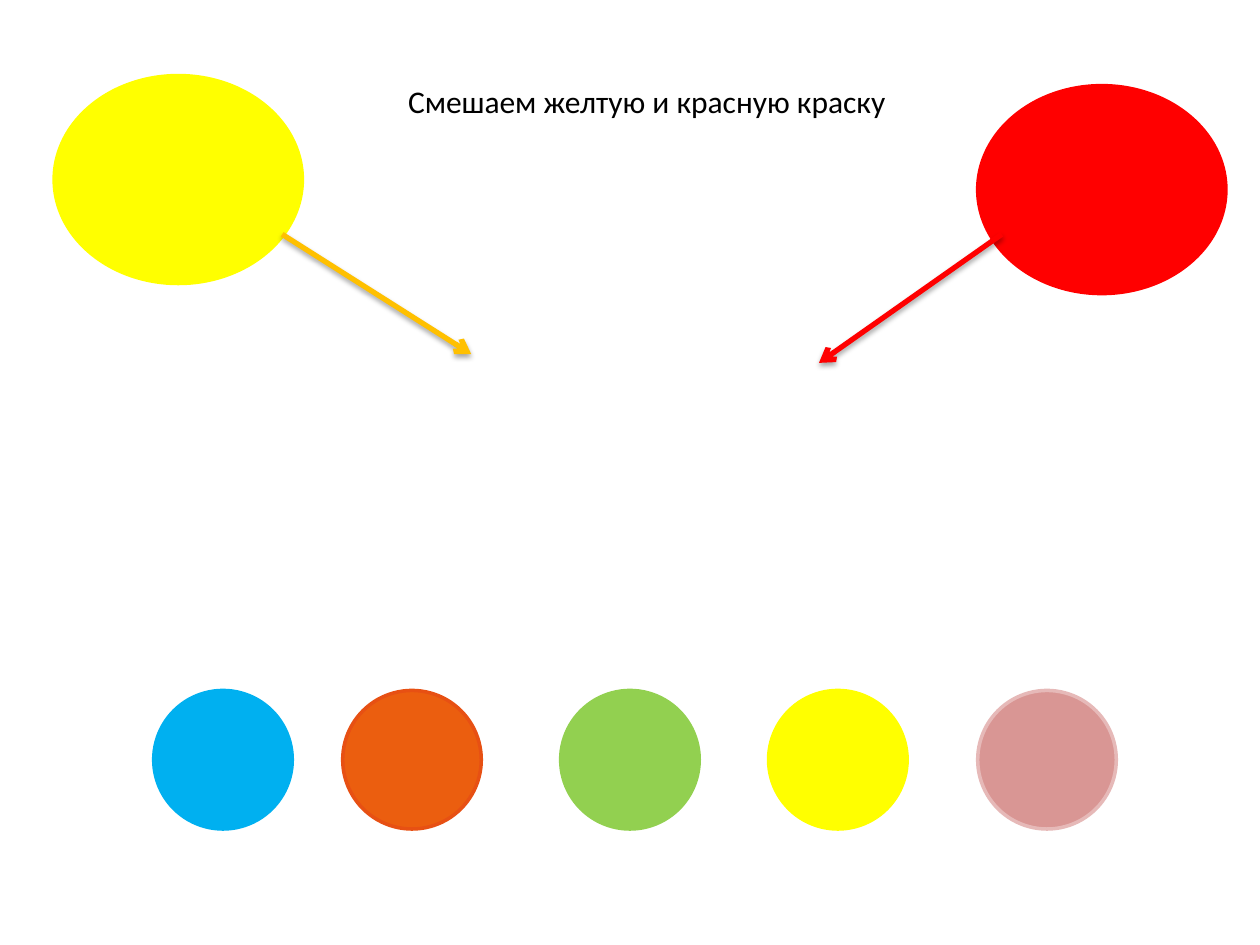
from lxml.etree import SubElement
from pptx import Presentation
from pptx.dml.color import RGBColor
from pptx.enum.shapes import MSO_CONNECTOR as Connector, MSO_SHAPE as Shape
from pptx.enum.text import MSO_AUTO_SIZE as AutoSize
from pptx.oxml.ns import qn
from pptx.util import Inches, Pt

YELLOW = RGBColor(0xFF, 0xFF, 0x00)
RED = RGBColor(0xFF, 0x00, 0x00)
AMBER = RGBColor(0xFF, 0xC0, 0x00)
BLUE = RGBColor(0x00, 0xB0, 0xF0)
ORANGE = RGBColor(0xEB, 0x5E, 0x0F)
DARK_ORANGE = RGBColor(0xE7, 0x50, 0x13)
GREEN = RGBColor(0x92, 0xD0, 0x50)
PINK = RGBColor(0xD9, 0x96, 0x94)
PALE_PINK = RGBColor(0xE6, 0xB9, 0xB8)
BLACK = RGBColor(0, 0, 0)

TASK = "Смешаем желтую и красную краску"
# Paints to mix: left, top, colour
PAINTS = [(0.43, 0.6, YELLOW), (7.76, 0.68, RED)]
PAINT_SIZE = (1.97, 1.65)
# Arrows: start, end, colour
ARROWS = [((2.24, 1.86), (3.74, 2.81), AMBER),
          ((7.95, 1.86), (6.5, 2.88), RED)]
# Answer choices: left, fill, outline
ANSWERS = [(1.22, BLUE, BLUE), (2.72, ORANGE, DARK_ORANGE),
           (4.45, GREEN, GREEN), (6.1, YELLOW, YELLOW),
           (7.76, PINK, PALE_PINK)]
ANSWER_TOP, ANSWER_SIZE = 5.48, (1.1, 1.1)


def add_blob(slide, left, top, size, fill, outline):
    blob = slide.shapes.add_shape(
        Shape.OVAL, *map(Inches, (left, top, *size)))
    blob.shadow.inherit = False
    blob.fill.solid()
    blob.fill.fore_color.rgb = fill
    blob.line.color.rgb = outline
    blob.line.width = Pt(2)


def add_arrow(slide, start, end, color):
    arrow = slide.shapes.add_connector(
        Connector.STRAIGHT, *map(Inches, (*start, *end)))
    arrow.line.color.rgb = color
    arrow.line.width = Pt(3)
    SubElement(arrow.line._get_or_add_ln(), qn("a:tailEnd"), type="arrow")
    # Soft shadow straight below
    effects = SubElement(arrow._element.spPr, qn("a:effectLst"))
    shadow = SubElement(effects, qn("a:outerShdw"), blurRad=str(Pt(3.1)),
                        dist=str(Pt(1.8)), dir="5400000", rotWithShape="0")
    black = SubElement(shadow, qn("a:srgbClr"), val="000000")
    SubElement(black, qn("a:alpha"), val="35000")


def main():
    deck = Presentation()
    deck.slide_width, deck.slide_height = Inches(10), Inches(7.5)
    slide = deck.slides.add_slide(deck.slide_layouts[6])

    # Paints and arrows to the mixing place
    for left, top, color in PAINTS:
        add_blob(slide, left, top, PAINT_SIZE, color, color)
    for start, end, color in ARROWS:
        add_arrow(slide, start, end, color)

    # Row of answers
    for left, fill, outline in ANSWERS:
        add_blob(slide, left, ANSWER_TOP, ANSWER_SIZE, fill, outline)

    # Task
    task = slide.shapes.add_textbox(*map(Inches, (3.14, 0.6, 4.04, 0.4)))
    frame = task.text_frame
    frame.word_wrap = False
    frame.auto_size = AutoSize.SHAPE_TO_FIT_TEXT
    frame.text = TASK
    font = frame.paragraphs[0].font
    font.name, font.size = "Calibri", Pt(18)
    font.color.rgb = BLACK

    deck.save("out.pptx")


if __name__ == "__main__":
    main()
